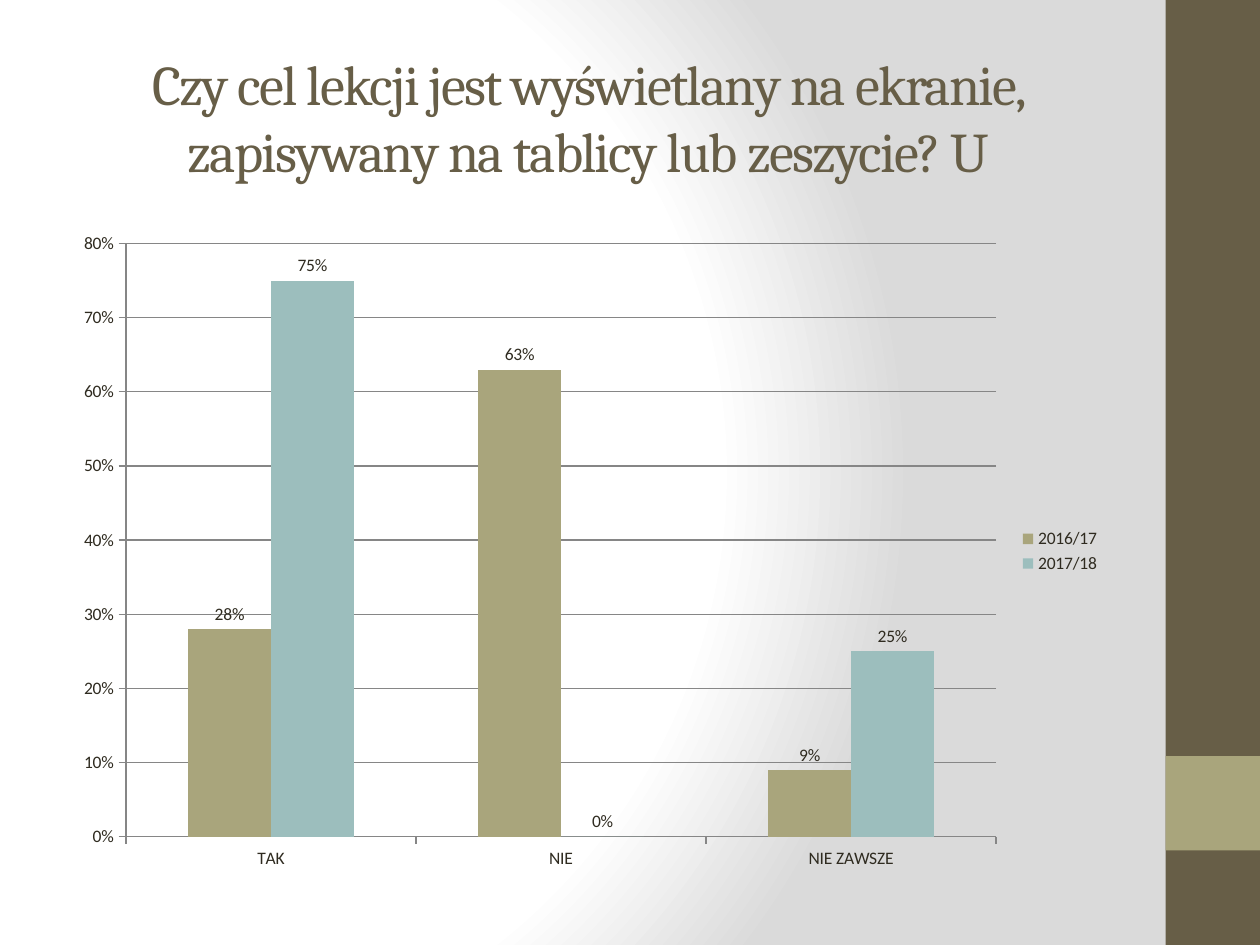
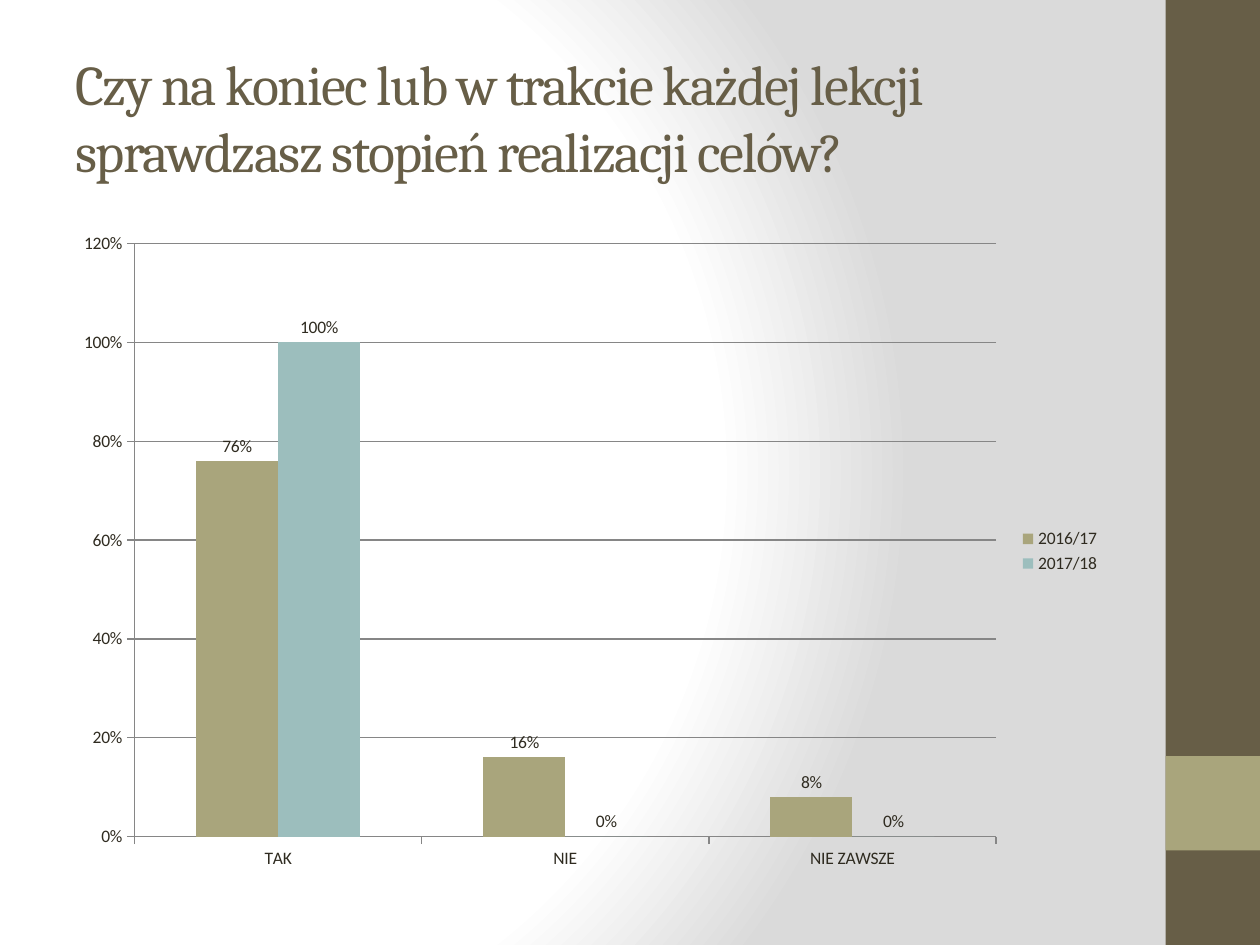
"""Builds two survey slides comparing answers from two school years."""
from pptx import Presentation
from pptx.chart.data import CategoryChartData
from pptx.dml.color import RGBColor
from pptx.enum.chart import XL_CHART_TYPE, XL_LABEL_POSITION, XL_LEGEND_POSITION, XL_TICK_MARK
from pptx.enum.shapes import MSO_SHAPE
from pptx.enum.text import MSO_ANCHOR, MSO_AUTO_SIZE, PP_ALIGN
from pptx.oxml import parse_xml
from pptx.oxml.ns import nsdecls
from pptx.util import Pt

COLUMNS = XL_CHART_TYPE.COLUMN_CLUSTERED
LABELS_ABOVE = XL_LABEL_POSITION.OUTSIDE_END
LEGEND_RIGHT = XL_LEGEND_POSITION.RIGHT
TICK_OUT = XL_TICK_MARK.OUTSIDE
RECTANGLE = MSO_SHAPE.RECTANGLE
MIDDLE = MSO_ANCHOR.MIDDLE
NO_AUTOFIT = MSO_AUTO_SIZE.NONE
LEFT, CENTER = PP_ALIGN.LEFT, PP_ALIGN.CENTER

COLORS = {
    "brown": "675E47",
    "olive": "A9A57C",
    "teal": "9CBEBD",
    "ink": "2F2B20",
    "line": "868686",
    "white": "FFFFFF",
    "gray": "DADADA",
}
HEADING_FONT, BODY_FONT = "Cambria", "Calibri"
PERCENT = "0%"
ANSWERS = ["TAK", "NIE", "NIE ZAWSZE"]
YEAR_COLORS = {"2016/17": "olive", "2017/18": "teal"}
BACKDROP_STOPS = [(0, "white"), (75, "white"), (100, "gray")]

QUESTIONS = [
    {
        "title": "Czy cel lekcji jest wyświetlany na ekranie, "
                 "zapisywany na tablicy lub zeszycie? U",
        "align": CENTER,
        "shares": [(0.28, 0.63, 0.09), (0.75, 0, 0.25)],
        "top": 0.8,
        "step": 0.1,
    },
    {
        "title": "Czy na koniec lub w trakcie każdej lekcji "
                 "sprawdzasz stopień realizacji celów?",
        "align": LEFT,
        "shares": [(0.76, 0.16, 0.08), (1, 0, 0)],
        "top": 1.2,
        "step": 0.2,
    },
]


def rgb(name):
    return RGBColor.from_string(COLORS[name])


def style_font(font, size, color, face):
    font.size = Pt(size)
    font.name = face
    font.color.rgb = rgb(color)


def write(frame, text, size=10, color="ink", face=BODY_FONT, align=LEFT, spacing=0):
    paragraph = frame.paragraphs[0]
    paragraph.alignment = align
    run = paragraph.add_run()
    run.text = text
    style_font(run.font, size, color, face)
    run.font.bold = False
    run.font._element.set("spc", str(round(spacing * 100)))


class Deck:
    def __init__(self):
        self.prs = Presentation()
        self.prs.slide_width, self.prs.slide_height = Pt(720), Pt(540)
        self.slide = None
        self.backdrop()

    def backdrop(self):
        master = self.prs.slide_master
        master.background.fill.gradient()
        gradient = master.element.xpath("./p:cSld/p:bg//a:gradFill")[0]
        stops = "".join(
            f'<a:gs pos="{position * 1000}"><a:srgbClr val="{COLORS[color]}"/></a:gs>'
            for position, color in BACKDROP_STOPS
        )
        gradient.getparent().replace(gradient, parse_xml(
            f'<a:gradFill {nsdecls("a")} rotWithShape="1"><a:gsLst>{stops}</a:gsLst>'
            '<a:path path="circle"><a:fillToRect l="20000" t="50000" r="100000" b="50000"/>'
            "</a:path></a:gradFill>"
        ))

    def new_slide(self):
        self.slide = self.prs.slides.add_slide(self.prs.slide_layouts[5])
        self.band(0, 540, "brown")
        self.band(432, 54, "olive")

    def band(self, top, height, color):
        band = self.slide.shapes.add_shape(RECTANGLE, Pt(666), Pt(top), Pt(54), Pt(height))
        band.shadow.inherit = False
        band.fill.solid()
        band.fill.fore_color.rgb = rgb(color)
        band.line.fill.background()

    def title(self, text, align):
        heading = self.slide.shapes.title
        heading.left, heading.top = Pt(36), Pt(21.6)
        heading.width, heading.height = Pt(600), Pt(90)
        frame = heading.text_frame
        frame.word_wrap = True
        frame.auto_size = NO_AUTOFIT
        frame.vertical_anchor = MIDDLE
        write(frame, text, size=32, color="brown", face=HEADING_FONT, align=align, spacing=-1)

    def chart(self, shares, top, step):
        data = CategoryChartData(number_format=PERCENT)
        data.categories = ANSWERS
        for year, values in zip(YEAR_COLORS, shares):
            data.add_series(year, values)
        chart = self.slide.shapes.add_chart(
            COLUMNS, Pt(36), Pt(126), Pt(600), Pt(378), data).chart
        style_font(chart.font, 10, "ink", BODY_FONT)
        chart.has_title = False
        chart.has_legend = True
        chart.legend.position = LEGEND_RIGHT
        chart.legend.include_in_layout = False
        self.axes(chart, top, step)
        self.columns(chart.plots[0])

    def axes(self, chart, top, step):
        scale = chart.value_axis
        scale.minimum_scale, scale.maximum_scale, scale.major_unit = 0, top, step
        scale.has_major_gridlines = True
        scale.tick_labels.number_format = PERCENT
        scale.tick_labels.number_format_is_linked = False
        for axis in (chart.category_axis, scale):
            axis.major_tick_mark = TICK_OUT
        for lined in (chart.category_axis, scale, scale.major_gridlines):
            lined.format.line.color.rgb = rgb("line")
            lined.format.line.width = Pt(0.75)

    def columns(self, plot):
        plot.gap_width, plot.overlap = 150, 0
        plot.vary_by_categories = False
        for series, color in zip(plot.series, YEAR_COLORS.values()):
            series.format.fill.solid()
            series.format.fill.fore_color.rgb = rgb(color)
            series.invert_if_negative = False
            labels = series.data_labels
            labels.show_value = True
            labels.number_format = PERCENT
            labels.number_format_is_linked = False
            labels.position = LABELS_ABOVE


def main():
    deck = Deck()
    for question in QUESTIONS:
        deck.new_slide()
        deck.title(question["title"], question["align"])
        deck.chart(question["shares"], question["top"], question["step"])
    deck.prs.save("out.pptx")


if __name__ == "__main__":
    main()
